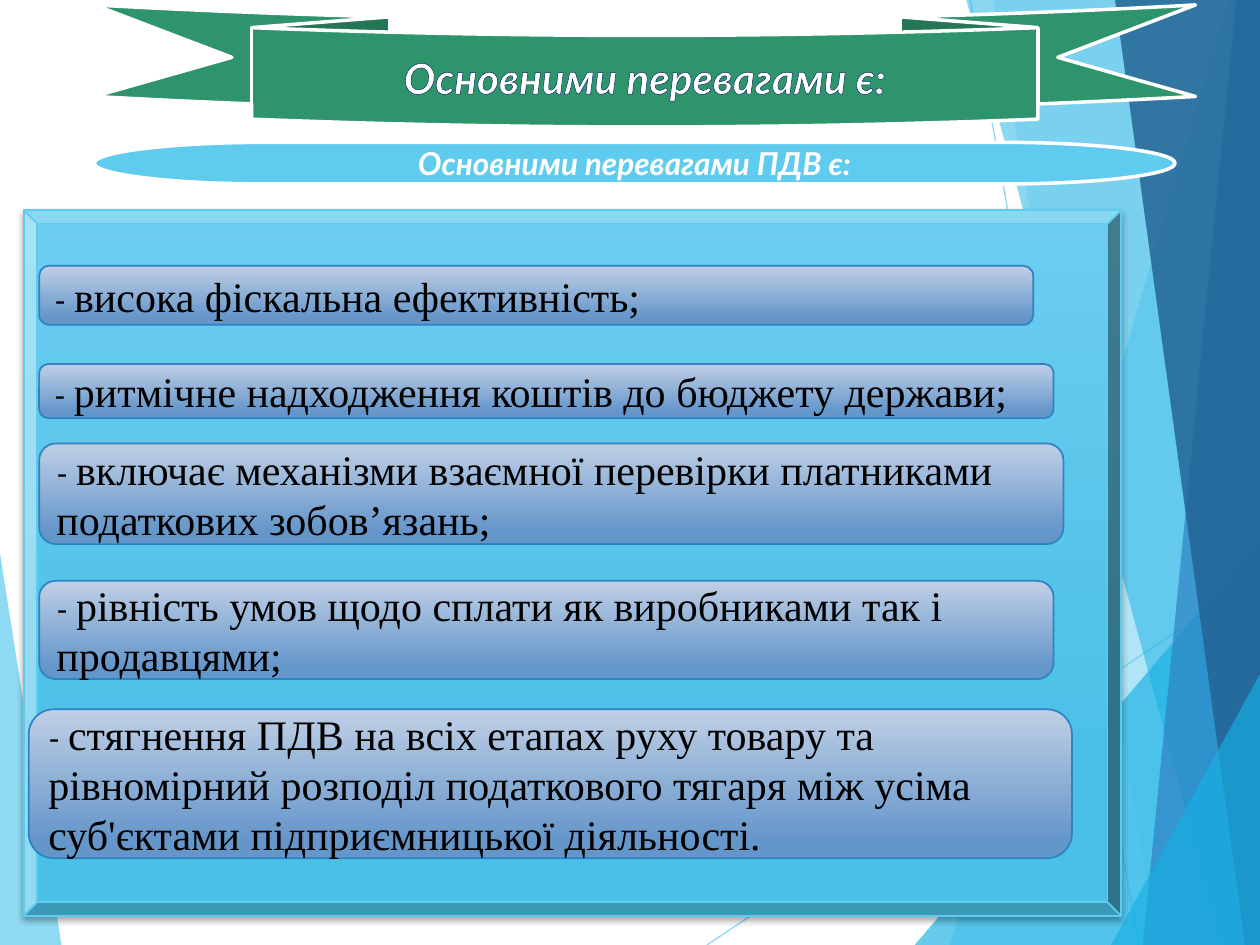
from typing import NamedTuple

from lxml import etree
from pptx import Presentation
from pptx import util as u
from pptx.dml.color import RGBColor
from pptx.enum import shapes, text
from pptx.oxml.ns import qn

WIDTH, HEIGHT = 25.4, 19.05  # cm, like every length below
SKY, AZURE, BLUE, NAVY = "5FCBEF", "17B0E4", "2E83C3", "226292"
WHITE, BLACK, GREEN = "FFFFFF", "000000", "2E946B"
PRESET = shapes.MSO_SHAPE


class Box(NamedTuple):
    left: float
    top: float
    width: float
    height: float


class Facet(NamedTuple):
    corners: list[tuple[float, float]]
    color: str
    opacity: int


class Ray(NamedTuple):
    start: tuple[float, float]
    end: tuple[float, float]


class Advantage(NamedTuple):
    box: Box
    wording: str


def band(top_x: float, bottom_x: float) -> list[tuple[float, float]]:
    """Corners of a full-height area that reaches the right edge."""
    return [(top_x, 0), (bottom_x, HEIGHT), (WIDTH, HEIGHT), (WIDTH, 0)]


def corner(bottom_x: float, right_y: float) -> list[tuple[float, float]]:
    """Corners of a triangle in the bottom right of the slide."""
    return [(bottom_x, HEIGHT), (WIDTH, right_y), (WIDTH, HEIGHT)]


FACETS_BEHIND = [Facet([(0, 11.15), (1.24, HEIGHT), (0, HEIGHT)], SKY, 70)]
RAYS = [
    Ray((14.25, HEIGHT), (WIDTH, 11.61)),
    Ray((19.56, 0), (22.96, HEIGHT)),
]
FACETS_FRONT = [
    Facet(band(24.77, 19.15), SKY, 36),
    Facet(band(20.02, 23.34), SKY, 20),
    Facet(corner(18.44, 10.9), AZURE, 66),
    Facet(band(19.48, 24.64), AZURE, 50),
    Facet(band(24.92, 23.04), BLUE, 70),
    Facet(band(22.48, 25.1), NAVY, 82),
    Facet(corner(22.4, 13.59), AZURE, 66),
]
ADVANTAGES = [
    Advantage(Box(0.79, 5.36, 20.04, 1.19), "висока фіскальна ефективність;"),
    Advantage(Box(0.79, 7.34, 20.45, 1.09),
              "ритмічне надходження коштів до бюджету держави;"),
    Advantage(Box(0.79, 8.94, 20.65, 2.03),
              "включає механізми взаємної перевірки платниками "
              "податкових зобов’язань;"),
    Advantage(Box(0.79, 11.71, 20.45, 1.98),
              "рівність умов щодо сплати як виробниками так і продавцями;"),
    Advantage(Box(0.58, 14.3, 21.03, 3),
              "стягнення ПДВ на всіх етапах руху товару та рівномірний "
              "розподіл податкового тягаря між усіма суб'єктами "
              "підприємницької діяльності."),
]


def rgb(color: str) -> RGBColor:
    return RGBColor.from_string(color)


def set_opacity(color_parent, percent: int) -> None:
    for color in color_parent.iter(qn("a:srgbClr")):
        etree.SubElement(color, qn("a:alpha"), val=str(percent * 1000))


def draw_facet(slide, facet: Facet) -> None:
    points = [(u.Cm(x), u.Cm(y)) for x, y in facet.corners]
    builder = slide.shapes.build_freeform(*points[0])
    builder.add_line_segments(points[1:])
    area = builder.convert_to_shape()
    area.shadow.inherit = False
    area.fill.solid()
    area.fill.fore_color.rgb = rgb(facet.color)
    area.line.fill.background()
    set_opacity(area.element.spPr, facet.opacity)


def draw_ray(slide, ray: Ray) -> None:
    line = slide.shapes.add_connector(
        shapes.MSO_CONNECTOR.STRAIGHT,
        *(u.Cm(length) for length in ray.start + ray.end))
    line.line.color.rgb = rgb(SKY)
    line.line.width = u.Pt(0.75)
    set_opacity(line.element.spPr, 70)
    etree.SubElement(line.element.spPr, qn("a:effectLst"))


def draw_preset(slide, preset, box: Box, edge: str, edge_width: float):
    shape = slide.shapes.add_shape(preset, *(u.Cm(length) for length in box))
    shape.shadow.inherit = False
    shape.line.color.rgb = rgb(edge)
    shape.line.width = u.Pt(edge_width)
    shape.text_frame.word_wrap = True
    shape.text_frame.vertical_anchor = text.MSO_ANCHOR.MIDDLE
    return shape


def fill_downwards(shape, start: str, end: str, end_position: float) -> None:
    shape.fill.gradient()
    shape.fill.gradient_angle = 270
    stops = shape.fill.gradient_stops
    for stop, color, position in zip(stops, (start, end), (0, end_position)):
        stop.color.rgb = rgb(color)
        stop.position = position


def format_run(run, font: str, size: float, color: str) -> None:
    run.font.name = font
    run.font.size = u.Pt(size)
    run.font.color.rgb = rgb(color)


def draw_heading(slide, preset, box: Box, fill: str, wording: str, size: float):
    heading = draw_preset(slide, preset, box, WHITE, 2)
    heading.fill.solid()
    heading.fill.fore_color.rgb = rgb(fill)
    heading.text_frame.text = wording
    paragraph = heading.text_frame.paragraphs[0]
    paragraph.alignment = text.PP_ALIGN.CENTER
    run = paragraph.runs[0]
    format_run(run, "Lato", size, WHITE)
    run.font.bold = run.font.italic = True
    return heading


def outline_letters(run, color: str, width: float) -> None:
    outline = etree.Element(qn("a:ln"), w=str(u.Pt(width)))
    solid = etree.SubElement(outline, qn("a:solidFill"))
    etree.SubElement(solid, qn("a:srgbClr"), val=color)
    run.font._element.insert(0, outline)


def draw_panel(slide) -> None:
    panel = draw_preset(slide, PRESET.BEVEL, Box(0.48, 4.24, 22.12, 14.22), SKY, 1)
    panel.adjustments[0] = 0.019
    fill_downwards(panel, "6CCDF0", "4BC0E6", 0.78)
    effects = panel.element.spPr.find(qn("a:effectLst"))
    shadow = etree.SubElement(
        effects, qn("a:outerShdw"), blurRad=str(u.Pt(3)), dist=str(u.Pt(2)),
        dir="5400000", rotWithShape="0")
    etree.SubElement(shadow, qn("a:srgbClr"), val=BLACK)
    set_opacity(shadow, 35)


def draw_advantage(slide, advantage: Advantage) -> None:
    card = draw_preset(slide, PRESET.FLOWCHART_ALTERNATE_PROCESS,
                       advantage.box, BLUE, 1)
    fill_downwards(card, "BFCFE5", "6596CA", 0.88)
    paragraph = card.text_frame.paragraphs[0]
    paragraph.alignment = text.PP_ALIGN.LEFT
    for wording, font, size in (("- ", "Lato", 18),
                                (advantage.wording, "Times New Roman", 24)):
        run = paragraph.add_run()
        run.text = wording
        format_run(run, font, size, BLACK)


def main() -> None:
    deck = Presentation()
    deck.slide_width, deck.slide_height = u.Cm(WIDTH), u.Cm(HEIGHT)
    slide = deck.slides.add_slide(deck.slide_layouts[6])

    for facet in FACETS_BEHIND:
        draw_facet(slide, facet)
    for ray in RAYS:
        draw_ray(slide, ray)
    for facet in FACETS_FRONT:
        draw_facet(slide, facet)

    ribbon = draw_heading(slide, PRESET.CURVED_DOWN_RIBBON,
                          Box(1.9, 0.1, 22.2, 2.46), GREEN,
                          "Основними перевагами є:", 24)
    for index, ratio in enumerate((0.25, 0.714, 0.125)):
        ribbon.adjustments[index] = ratio
    outline_letters(ribbon.text_frame.paragraphs[0].runs[0], "002060", 0.75)
    draw_panel(slide)
    draw_heading(slide, PRESET.FLOWCHART_TERMINATOR, Box(1.9, 2.87, 21.79, 0.84),
                 SKY, "Основними перевагами ПДВ є:", 18)
    for advantage in ADVANTAGES:
        draw_advantage(slide, advantage)
    deck.save("out.pptx")


if __name__ == "__main__":
    main()
